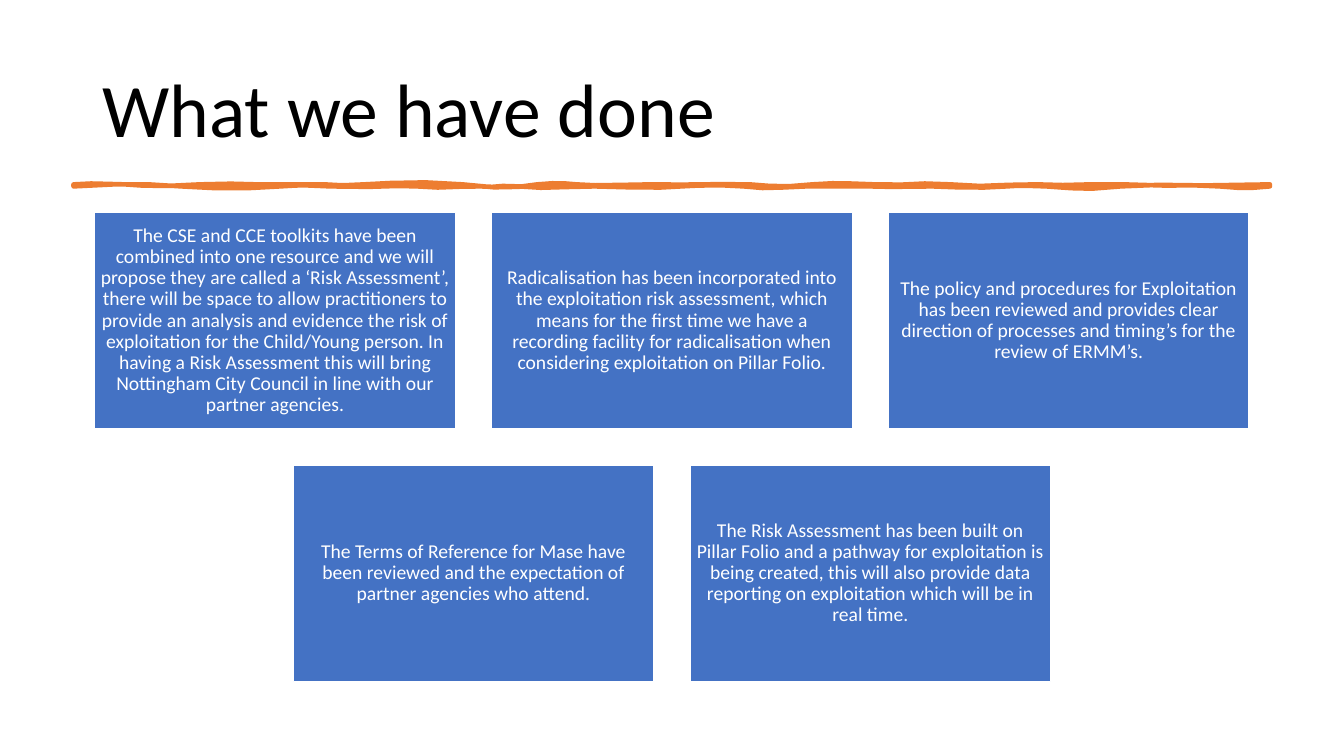
from pptx import Presentation
from pptx.dml.color import RGBColor
from pptx.enum.shapes import MSO_SHAPE as Shape
from pptx.enum.text import MSO_ANCHOR as Anchor, PP_ALIGN as Align
from pptx.util import Cm, Pt

# Content
TITLE = "What we have done"
ROWS = [
    [
        "The CSE and CCE toolkits have been combined into one resource and we will "
        "propose they are called a ‘Risk Assessment’, there will be space to allow "
        "practitioners to provide an analysis and evidence the risk of exploitation "
        "for the Child/Young person. In having a Risk Assessment this will bring "
        "Nottingham City Council in line with our partner agencies.",
        "Radicalisation has been incorporated into the exploitation risk assessment, "
        "which means for the first time we have a recording facility for "
        "radicalisation when considering exploitation on Pillar Folio.",
        "The policy and procedures for Exploitation has been reviewed and provides "
        "clear direction of processes and timing’s for the review of ERMM’s.",
    ],
    [
        "The Terms of Reference for Mase have been reviewed and the expectation of "
        "partner agencies who attend.",
        "The Risk Assessment has been built on Pillar Folio and a pathway for "
        "exploitation is being created, this will also provide data reporting on "
        "exploitation which will be in real time.",
    ],
]

# Brush stroke in hundredths of an inch: two control points and an end per curve
STROKE_START = (73, 183)
STROKE_CURVES = [
    (89, 181, 111, 183, 124, 183), (136, 184, 162, 186, 198, 183),
    (234, 181, 251, 184, 284, 183), (317, 183, 307, 183, 322, 183),
    (338, 184, 342, 184, 361, 183), (380, 182, 424, 179, 459, 183),
    (494, 188, 517, 186, 533, 183), (549, 181, 563, 182, 572, 183),
    (581, 185, 625, 183, 646, 183), (667, 184, 723, 182, 744, 183),
    (765, 185, 782, 186, 806, 183), (830, 181, 838, 182, 868, 183),
    (899, 185, 914, 180, 943, 183), (972, 187, 1002, 182, 1029, 183),
    (1055, 185, 1078, 182, 1115, 183), (1151, 185, 1199, 184, 1260, 183),
    (1260, 184, 1260, 184, 1260, 185), (1242, 187, 1230, 187, 1210, 185),
    (1190, 184, 1149, 182, 1112, 185), (1075, 189, 1070, 187, 1038, 185),
    (1005, 184, 1018, 184, 999, 185), (980, 187, 948, 186, 925, 185),
    (902, 185, 884, 186, 863, 185), (841, 185, 828, 185, 800, 185),
    (773, 186, 757, 188, 738, 185), (719, 183, 688, 184, 676, 185),
    (663, 187, 624, 186, 590, 185), (555, 185, 537, 188, 515, 185),
    (494, 183, 491, 187, 477, 185), (463, 184, 430, 188, 414, 185),
    (399, 183, 371, 187, 328, 185), (286, 183, 303, 184, 278, 185),
    (253, 187, 213, 188, 180, 185), (147, 182, 118, 182, 73, 185),
]
STROKE_UNIT = Cm(0.0254)
STEPS = 3

FONT = "Calibri"
BLACK = RGBColor(0x00, 0x00, 0x00)
WHITE = RGBColor(0xFF, 0xFF, 0xFF)
BLUE = RGBColor(0x44, 0x72, 0xC4)
ORANGE = RGBColor(0xED, 0x7D, 0x31)

SLIDE_W, SLIDE_H = Cm(33.87), Cm(19.05)
BOX_W, BOX_H = Cm(9.09), Cm(5.45)
PITCH_X, PITCH_Y = Cm(10), Cm(6.36)
BOXES_TOP = Cm(5.36)
INSET = Cm(0.15)


def style(p, size, color, align):
    p.alignment = align
    p.line_spacing = 0.9
    p.font.name, p.font.size = FONT, Pt(size)
    p.font.color.rgb = color


def flatten(start, curves):
    """Points along a chain of cubic curves."""
    points = []
    x0, y0 = start
    for x1, y1, x2, y2, x3, y3 in curves:
        for i in range(1, STEPS + 1):
            t = i / STEPS
            u = 1 - t
            a, b, c, d = u**3, 3 * u * u * t, 3 * u * t * t, t**3
            points.append(((a * x0 + b * x1 + c * x2 + d * x3) * STROKE_UNIT,
                           (a * y0 + b * y1 + c * y2 + d * y3) * STROKE_UNIT))
        x0, y0 = x3, y3
    return points


def paint(sp, fill, line, width):
    sp.shadow.inherit = False
    sp.fill.solid()
    sp.fill.fore_color.rgb = fill
    sp.line.color.rgb = line
    sp.line.width = Pt(width)


def add_box(slide, left, top, text):
    sp = slide.shapes.add_shape(Shape.RECTANGLE, left, top, BOX_W, BOX_H)
    paint(sp, BLUE, WHITE, 1)
    tf = sp.text_frame
    tf.word_wrap = True
    tf.vertical_anchor = Anchor.MIDDLE
    tf.margin_left = tf.margin_right = tf.margin_top = tf.margin_bottom = INSET
    p = tf.paragraphs[0]
    p.text = text
    style(p, 14, WHITE, Align.CENTER)


def main():
    prs = Presentation()
    prs.slide_width, prs.slide_height = SLIDE_W, SLIDE_H
    slide = prs.slides.add_slide(prs.slide_layouts[5])

    # Title
    title = slide.shapes.title
    title.left, title.top = Cm(2.33), Cm(1.01)
    title.width, title.height = Cm(29.21), Cm(3.69)
    title.text_frame.text = TITLE
    title.text_frame.vertical_anchor = Anchor.MIDDLE
    style(title.text_frame.paragraphs[0], 54, BLACK, Align.LEFT)

    # Brush stroke under the title
    x, y = STROKE_START
    builder = slide.shapes.build_freeform(x * STROKE_UNIT, y * STROKE_UNIT)
    builder.add_line_segments(flatten(STROKE_START, STROKE_CURVES), close=True)
    paint(builder.convert_to_shape(), ORANGE, ORANGE, 3.25)

    # Boxes, each row centred on the slide
    for row, texts in enumerate(ROWS):
        row_w = (len(texts) - 1) * PITCH_X + BOX_W
        left = (SLIDE_W - row_w) // 2
        for col, text in enumerate(texts):
            add_box(slide, left + col * PITCH_X, BOXES_TOP + row * PITCH_Y, text)

    prs.save("out.pptx")


if __name__ == "__main__":
    main()
